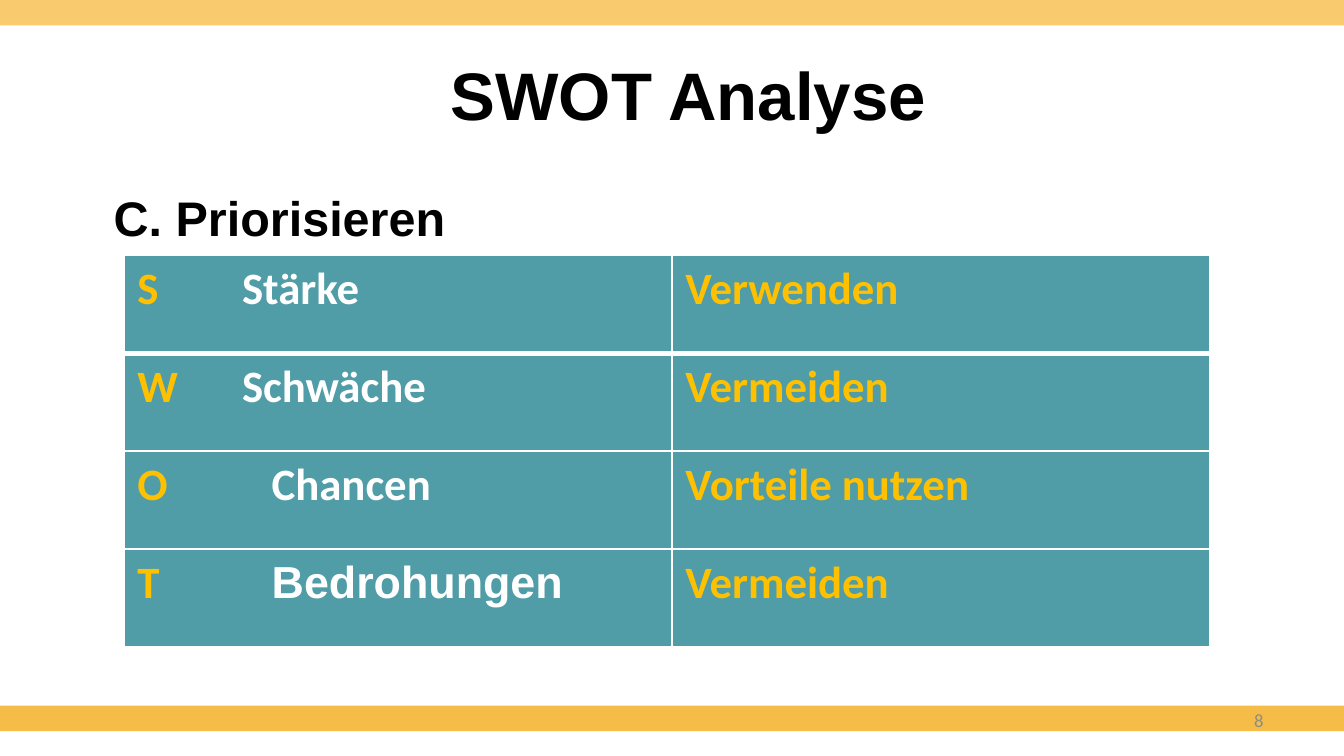
from lxml import etree
from pptx import Presentation
from pptx.dml.color import RGBColor
from pptx.enum.shapes import MSO_SHAPE
from pptx.enum.text import MSO_ANCHOR, PP_ALIGN
from pptx.oxml.ns import qn
from pptx.util import Cm, Pt

RECTANGLE = MSO_SHAPE.RECTANGLE
TOP, MIDDLE = MSO_ANCHOR.TOP, MSO_ANCHOR.MIDDLE
LEFT, CENTER, RIGHT = PP_ALIGN.LEFT, PP_ALIGN.CENTER, PP_ALIGN.RIGHT

WHITE, BLACK, GOLD, TEAL = "FFFFFF", "000000", "FFC000", "509DA7"
SLIDE_WIDTH, SLIDE_HEIGHT = Cm(25.4), Cm(14.29)
ROW_HEIGHT = Cm(1.85)
COLUMN_WIDTHS = (Cm(10.36), Cm(10.16))
NEAR_TAB, FAR_TAB = Cm(1.98), Cm(2.54)

PRIORITIES = [
    ("S \t", "Stärke", "Calibri", NEAR_TAB, "Verwenden"),
    ("W \t", "Schwäche", "Calibri", NEAR_TAB, "Vermeiden"),
    ("O\t", "Chancen", "Calibri", FAR_TAB, "Vorteile nutzen"),
    ("T\t", "Bedrohungen", "Arial", FAR_TAB, "Vermeiden"),
]


def color(hex_code):
    """Return the colour for a hex string."""
    return RGBColor.from_string(hex_code)


def set_font(font, name, size, hex_code, bold=True):
    """Set face, size, colour and weight of a font."""
    font.name, font.size, font.bold = name, Pt(size), bold
    font.color.rgb = color(hex_code)


def add_band(slide, top, hex_code):
    """Add a coloured band across the slide."""
    band = slide.shapes.add_shape(RECTANGLE, 0, top, SLIDE_WIDTH, Cm(0.48))
    band.shadow.inherit = False
    band.fill.solid()
    band.fill.fore_color.rgb = color(hex_code)
    band.line.fill.background()


def add_text(slide, text, box, font, align=LEFT, anchor=MIDDLE, margin_top=0.13):
    """Add a one-paragraph text box, with lengths in centimetres."""
    frame = slide.shapes.add_textbox(*map(Cm, box)).text_frame
    frame.word_wrap = True
    frame.vertical_anchor = anchor
    frame.margin_top = Cm(margin_top)
    paragraph = frame.paragraphs[0]
    paragraph.text = text
    paragraph.alignment = align
    set_font(paragraph.font, *font)


def add_tab(paragraph, position):
    """Give a paragraph a left tab stop."""
    tabs = etree.SubElement(paragraph._p.get_or_add_pPr(), qn("a:tabLst"))
    etree.SubElement(tabs, qn("a:tab"), pos=str(position), algn="l")


def style_cell(cell, top_width, bottom_width):
    """Fill a cell and draw its white borders."""
    cell.fill.solid()
    cell.fill.fore_color.rgb = color(TEAL)
    properties = cell._tc.get_or_add_tcPr()
    borders = (("L", 1), ("R", 1), ("T", top_width), ("B", bottom_width))
    for index, (side, width) in enumerate(borders):
        border = etree.Element(qn(f"a:ln{side}"), w=str(Pt(width)))
        fill = etree.SubElement(border, qn("a:solidFill"))
        etree.SubElement(fill, qn("a:srgbClr"), val=WHITE)
        properties.insert(index, border)


def add_priority_table(slide):
    """Add the table of SWOT factors and how to treat them."""
    table = slide.shapes.add_table(
        len(PRIORITIES), len(COLUMN_WIDTHS), Cm(2.34), Cm(4.83),
        sum(COLUMN_WIDTHS), ROW_HEIGHT * len(PRIORITIES)).table
    table.horz_banding = False
    for column, width in zip(table.columns, COLUMN_WIDTHS):
        column.width = width
    for row, (letter, factor, face, tab, action) in enumerate(PRIORITIES):
        table.rows[row].height = ROW_HEIGHT
        factor_cell, action_cell = table.cell(row, 0), table.cell(row, 1)
        for cell in (factor_cell, action_cell):
            style_cell(cell, 3 if row == 1 else 1, 3 if row == 0 else 1)
        factor_line = factor_cell.text_frame.paragraphs[0]
        add_tab(factor_line, tab)
        for text, name, hex_code in ((letter, "Calibri", GOLD), (factor, face, WHITE)):
            run = factor_line.add_run()
            run.text = text
            set_font(run.font, name, 24, hex_code)
        action_line = action_cell.text_frame.paragraphs[0]
        action_line.text = action
        set_font(action_line.font, "Calibri", 24, GOLD)


def main():
    """Build the SWOT slide and save it."""
    presentation = Presentation()
    presentation.slide_width, presentation.slide_height = SLIDE_WIDTH, SLIDE_HEIGHT
    slide = presentation.slides.add_slide(presentation.slide_layouts[6])
    add_band(slide, Cm(13.34), "F5BD47")
    add_band(slide, 0, "FACA6E")
    add_text(slide, "SWOT Analyse", (1.9, 0.58, 22.23, 2.39),
             ("Arial", 36, BLACK), CENTER)
    add_text(slide, "C. Priorisieren", (1.9, 3.33, 22.23, 9.42),
             ("Arial", 26, BLACK), anchor=TOP, margin_top=0.23)
    add_text(slide, "8", (18.21, 13.23, 5.92, 0.76),
             ("Calibri", 10, "8C8C8C", False), RIGHT)
    add_priority_table(slide)
    presentation.save("out.pptx")


if __name__ == "__main__":
    main()
